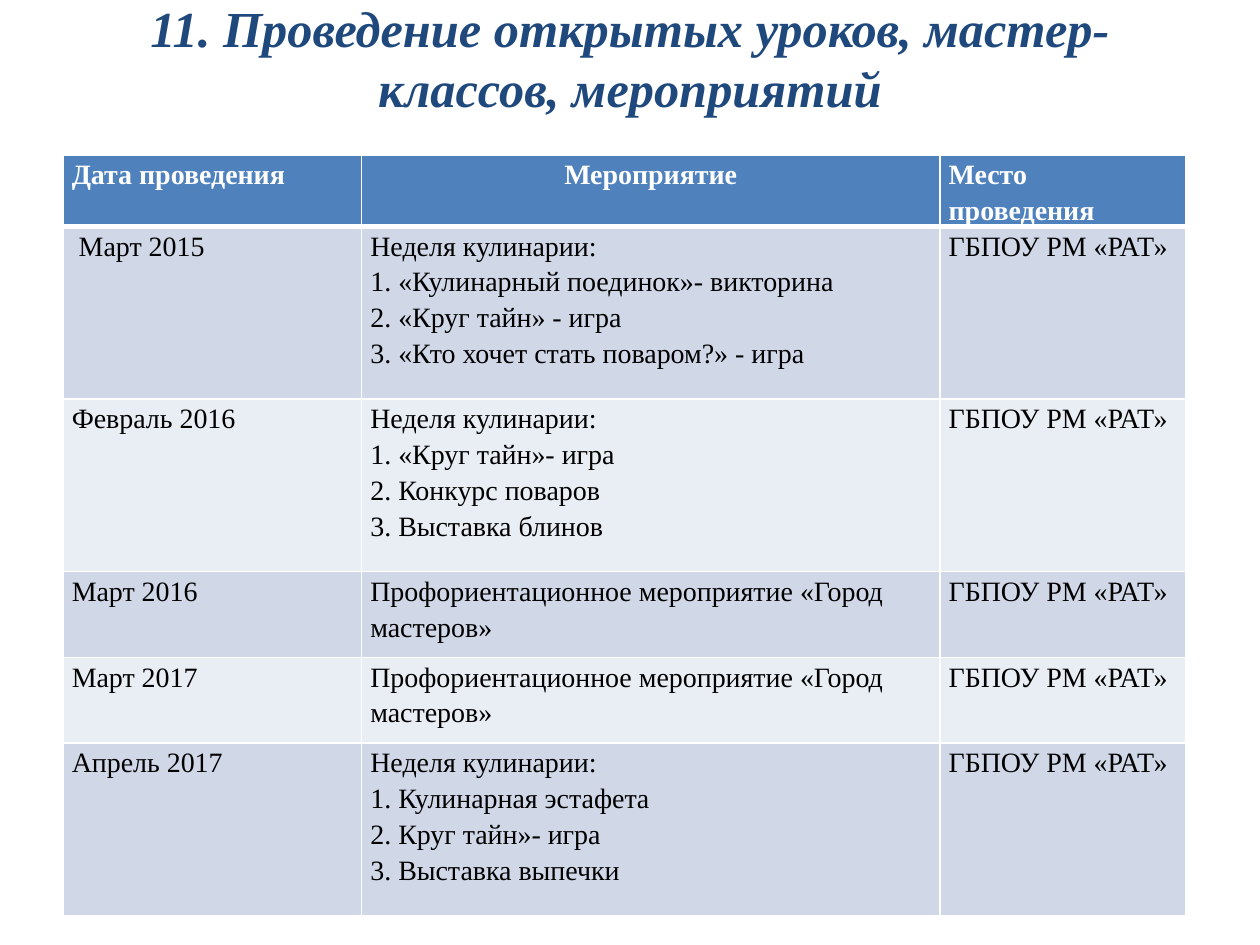
from dataclasses import dataclass

from lxml import etree
from pptx import Presentation
from pptx import util as u
from pptx.dml.color import RGBColor
from pptx.enum import text
from pptx.oxml import ns

FONT = "Times New Roman"
NAVY = RGBColor(0x1F, 0x49, 0x7D)
BLUE = RGBColor(0x4F, 0x81, 0xBD)
BAND_DARK = RGBColor(0xD0, 0xD8, 0xE8)
BAND_LIGHT = RGBColor(0xE9, 0xED, 0xF4)
WHITE = RGBColor(0xFF, 0xFF, 0xFF)
BLACK = RGBColor(0, 0, 0)

TITLE = "11. Проведение открытых уроков, мастер-классов, мероприятий"
HEADINGS = ["Дата проведения", "Мероприятие", "Место проведения"]
PLACE = "ГБПОУ РМ «РАТ»"
WEEK = "Неделя кулинарии:"
CITY = "Профориентационное мероприятие «Город мастеров»"
COLUMN_WIDTHS = [2.37, 4.59, 1.95]
HEADER_HEIGHT = 0.52


@dataclass
class Event:
    date: str
    lines: list[str]
    height: float


@dataclass
class CellStyle:
    fill: RGBColor
    color: RGBColor
    bold: bool = False
    bottom: float = 1


EVENTS = [
    Event(" Март 2015", [WEEK, "1. «Кулинарный поединок»- викторина",
                         "2. «Круг тайн» - игра",
                         "3. «Кто хочет стать поваром?» - игра"], 1.37),
    Event("Февраль 2016", [WEEK, "1. «Круг тайн»- игра",
                           "2. Конкурс поваров", "3. Выставка блинов"], 1.37),
    Event("Март 2016", [CITY], 0.68),
    Event("Март 2017", [CITY], 0.68),
    Event("Апрель 2017", [WEEK, "1. Кулинарная эстафета",
                          "2. Круг тайн»- игра", "3. Выставка выпечки"], 1.37),
]

HEADER = CellStyle(BLUE, WHITE, True, 3)
BANDS = [CellStyle(BAND_DARK, BLACK), CellStyle(BAND_LIGHT, BLACK)]


def add_run(p, content: str, size: float, color: RGBColor, bold: bool, italic: bool = False) -> None:
    r = p.add_run()
    r.text = content
    r.font.name = FONT
    r.font.size = u.Pt(size)
    r.font.color.rgb = color
    r.font.bold = bold
    r.font.italic = italic


def set_borders(cell, top: float, bottom: float) -> None:
    tc_pr = cell._tc.get_or_add_tcPr()
    widths = {"a:lnL": 1, "a:lnR": 1, "a:lnT": top, "a:lnB": bottom}
    for index, (tag, width) in enumerate(widths.items()):
        line = etree.Element(ns.qn(tag), w=str(u.Pt(width)))
        fill = etree.SubElement(line, ns.qn("a:solidFill"))
        etree.SubElement(fill, ns.qn("a:srgbClr"), val=str(WHITE))
        tc_pr.insert(index, line)


def fill_cell(cell, lines: list[str], style: CellStyle, top: float,
              align: text.PP_ALIGN = text.PP_ALIGN.LEFT, after: float = 10) -> None:
    cell.margin_left = cell.margin_right = u.Inches(0.07)
    cell.margin_top = cell.margin_bottom = 0
    cell.fill.solid()
    cell.fill.fore_color.rgb = style.fill
    set_borders(cell, top, style.bottom)
    tf = cell.text_frame
    for index, line in enumerate(lines):
        p = tf.add_paragraph() if index else tf.paragraphs[0]
        p.alignment = align
        p.line_spacing = 1.15
        p.space_after = u.Pt(after)
        add_run(p, line, 16, style.color, style.bold)


def add_title(s) -> None:
    sp = s.shapes.title
    sp.left, sp.top, sp.width, sp.height = map(u.Inches, (0.5, 0, 9, 0.91))
    tf = sp.text_frame
    tf.word_wrap = True
    tf.auto_size = text.MSO_AUTO_SIZE.NONE
    tf.vertical_anchor = text.MSO_ANCHOR.MIDDLE
    p = tf.paragraphs[0]
    p.alignment = text.PP_ALIGN.CENTER
    add_run(p, TITLE, 28.8, NAVY, True, True)


def add_schedule(s) -> None:
    heights = [HEADER_HEIGHT] + [event.height for event in EVENTS]
    table = s.shapes.add_table(
        len(heights), len(COLUMN_WIDTHS), u.Inches(0.5), u.Inches(1.23),
        u.Inches(sum(COLUMN_WIDTHS)), u.Inches(sum(heights))).table
    for column, width in zip(table.columns, COLUMN_WIDTHS):
        column.width = u.Inches(width)
    for row, height in zip(table.rows, heights):
        row.height = u.Inches(height)
    for index, heading in enumerate(HEADINGS):
        align = text.PP_ALIGN.CENTER if index == 1 else text.PP_ALIGN.LEFT
        fill_cell(table.cell(0, index), [heading], HEADER, 1, align)
    for index, event in enumerate(EVENTS):
        style = BANDS[index % 2]
        top = 1 if index else HEADER.bottom
        date, activity, place = table.rows[index + 1].cells
        fill_cell(date, [event.date], style, top)
        fill_cell(activity, event.lines, style, top, after=0)
        fill_cell(place, [PLACE], style, top)


def main() -> None:
    prs = Presentation()
    prs.slide_width = u.Inches(10)
    prs.slide_height = u.Inches(7.5)
    s = prs.slides.add_slide(prs.slide_layouts[5])
    add_title(s)
    add_schedule(s)
    prs.save("out.pptx")


if __name__ == "__main__":
    main()
